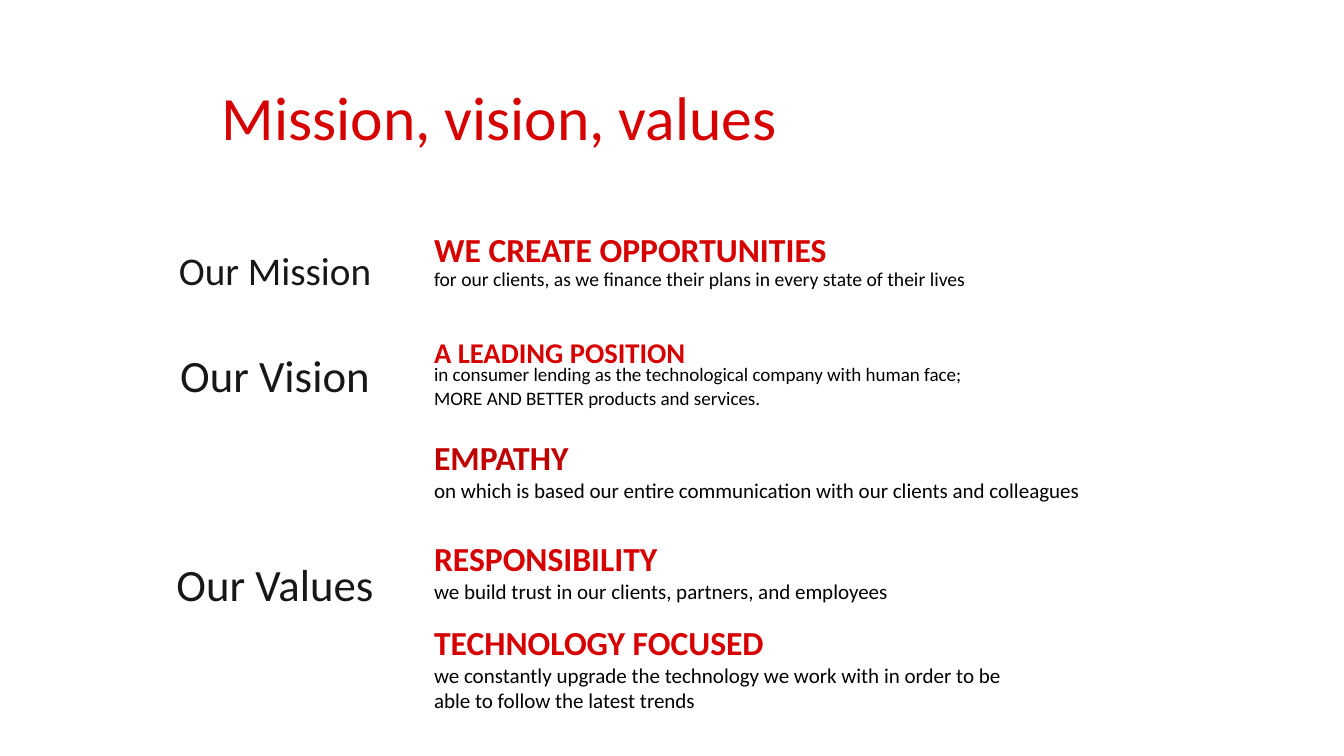
from dataclasses import dataclass

from pptx import Presentation
from pptx.dml.color import RGBColor
from pptx.enum import shapes, text
from pptx.util import Pt

FONT = "Calibri"
HEX = {"red": "D60000", "dark": "C00000", "ink": "181717",
       "black": "000000", "white": "FFFFFF"}
LABEL_X, LABEL_W = 90, 213
TEXT_X = LABEL_X + LABEL_W


@dataclass
class Label:
    name: str
    top: float
    high: float
    size: float


@dataclass
class Block:
    head: str
    body: list[str]
    top: float
    wide: float
    high: float
    big: float = 24
    small: float = 15
    tone: str = "red"
    lead: float = 1.0
    after: float = 0


LABELS = [
    Label("Our Mission", 161.3, 63.4, 28),
    Label("Our Vision", 236.9, 61.2, 32),
    Label("Our Values", 313.9, 205.2, 32),
]

BLOCKS = [
    Block("WE CREATE OPPORTUNITIES",
          ["for our clients, as we finance their plans in every state of their lives"],
          163.4, 510.5, 62.6, small=14, lead=0.9),
    Block("A LEADING POSITION",
          ["in consumer lending as the technological company with human face;",
           "MORE AND BETTER products and services."],
          242.6, 526.3, 64.8, big=20.4, small=13.6, lead=0.7, after=6),
    Block("EMPATHY",
          ["on which is based our entire communication with our clients and colleagues"],
          308.9, 503.3, 54.7, tone="dark"),
    Block("RESPONSIBILITY",
          ["we build trust in our clients, partners, and employees"],
          380.9, 460.8, 54.7),
    Block("TECHNOLOGY FOCUSED",
          ["we constantly upgrade the technology we work with in order to be "
           "able to follow the latest trends"],
          440.6, 427, 72.7),
]


def hue(name: str) -> RGBColor:
    return RGBColor.from_string(HEX[name])


def write(para, words: str, size: float, tone: str, bold: bool = False) -> None:
    run = para.add_run()
    run.text = words
    run.font.name = FONT
    run.font.size = Pt(size)
    run.font.bold = bold
    run.font.color.rgb = hue(tone)


def add_box(slide, left: float, top: float, wide: float, high: float):
    """Add a wrapping text box and return its text frame."""
    frame = slide.shapes.add_textbox(Pt(left), Pt(top), Pt(wide), Pt(high)).text_frame
    frame.word_wrap = True
    return frame


def add_title(slide) -> None:
    frame = add_box(slide, 151.2, 33.8, 550.8, 104.4)
    frame.vertical_anchor = text.MSO_ANCHOR.MIDDLE
    para = frame.paragraphs[0]
    para.line_spacing = 0.9
    write(para, "Mission, vision, values", 44, "red")


def add_label(slide, label: Label) -> None:
    rect = slide.shapes.add_shape(shapes.MSO_SHAPE.RECTANGLE, Pt(LABEL_X),
                                  Pt(label.top), Pt(LABEL_W), Pt(label.high))
    rect.shadow.inherit = False
    rect.fill.solid()
    rect.fill.fore_color.rgb = hue("white")
    rect.line.color.rgb = hue("white")
    rect.line.width = Pt(1)
    rect.text_frame.vertical_anchor = text.MSO_ANCHOR.MIDDLE
    para = rect.text_frame.paragraphs[0]
    para.alignment = text.PP_ALIGN.CENTER
    write(para, label.name, label.size, "ink")


def add_block(slide, block: Block) -> None:
    frame = add_box(slide, TEXT_X, block.top, block.wide, block.high)
    head = frame.paragraphs[0]
    head.line_spacing = block.lead
    write(head, block.head, block.big, block.tone, bold=True)
    for words in block.body:
        para = frame.add_paragraph()
        para.line_spacing = block.lead
        para.space_after = Pt(block.after)
        write(para, words, block.small, "black")


def main() -> None:
    deck = Presentation()
    deck.slide_width, deck.slide_height = Pt(960), Pt(540)
    slide = deck.slides.add_slide(deck.slide_layouts[6])
    add_title(slide)
    for label in LABELS:
        add_label(slide, label)
    for block in BLOCKS:
        add_block(slide, block)
    deck.save("out.pptx")


if __name__ == "__main__":
    main()
